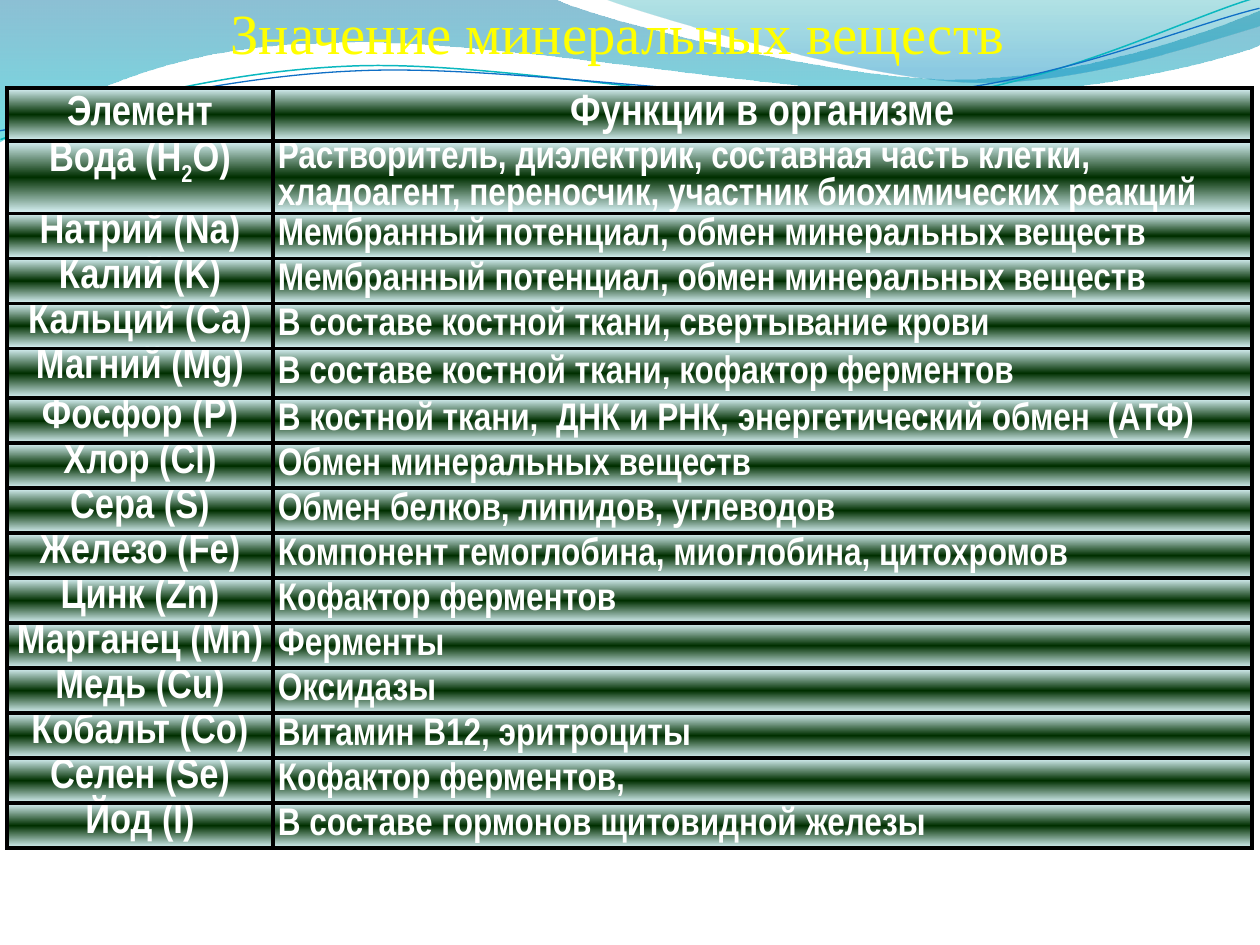
import math

from lxml import etree
from pptx import Presentation
from pptx import util as u
from pptx.dml.color import RGBColor
from pptx.enum import text
from pptx.oxml.ns import qn

HUES = {"title": "FFFF00", "text": "FFFFFF", "edge": "000000",
        "pale": "DBF5F9", "dark": "002F00", "blue": "0F6FC6", "teal": "0AB8BF",
        "deep": "0074A1", "aqua": "00C6CF", "sea": "00A1A9", "sky": "008BBF"}

TITLE = "Значение минеральных веществ"
HEAD = ("Элемент", "Функции в организме")
ROWS = [
    ("Вода (Н_2_О)", "Растворитель, диэлектрик, составная часть клетки, "
     "хладоагент, переносчик, участник биохимических реакций"),
    ("Натрий (Na)", "Мембранный потенциал, обмен минеральных веществ"),
    ("Калий (K)", "Мембранный потенциал, обмен минеральных веществ"),
    ("Кальций (Ca)", "В составе костной ткани, свертывание крови"),
    ("Магний (Mg)", "В составе костной ткани, кофактор ферментов"),
    ("Фосфор (P)", "В костной ткани,  ДНК и РНК, энергетический обмен  (АТФ)"),
    ("Хлор (Cl)", "Обмен минеральных веществ"),
    ("Сера (S)", "Обмен белков, липидов, углеводов"),
    ("Железо (Fe)", "Компонент гемоглобина, миоглобина, цитохромов"),
    ("Цинк (Zn)", "Кофактор ферментов"),
    ("Марганец (Mn)", "Ферменты"),
    ("Медь (Cu)", "Оксидазы"),
    ("Кобальт (Co)", "Витамин В12, эритроциты"),
    ("Селен (Se)", "Кофактор ферментов,"),
    ("Йод (I)", "В составе гормонов щитовидной железы"),
]
COLS = (266, 979)
TALL = {0: 53, 5: 50}
ROW = 45

# Each step holds one point for a straight line or three for a Bezier curve.
BANDS = [
    ([("deep", 0, 45), ("aqua", 100, 55)],
     [[(0, 0)], [(554, -1)],
      [(600, 21), (837, 79), (955, 79)], [(1075, 79), (1207, 33), (1260, 11)],
      [(1261, 45)],
      [(1239, 55), (1096, 96), (940, 95)], [(784, 95), (481, 35), (324, 43)],
      [(163, 45), (58, 105), (-1, 142)]]),
    ([("sea", 0, 30), ("sky", 80, 45)],
     [[(604, -1)],
      [(641, 14), (859, 78), (969, 82)], [(1079, 86), (1211, 40), (1260, 26)],
      [(1260, 0)]]),
]
CURVES = [
    ("teal", 0.85,
     [[(0, 140)], [(60, 117), (199, 72), (349, 66)],
      [(498, 59), (747, 112), (898, 101)], [(1050, 89), (1182, 19), (1257, -3)]]),
    ("blue", 0.75,
     [[(0, 131)], [(59, 121), (207, 77), (357, 71)],
      [(508, 64), (752, 106), (903, 95)], [(1053, 84), (1186, 26), (1260, 8)]]),
]
TILT = 2.7
PIVOT = (629, 73)
METAL = [("pale", 0, 100), ("dark", 50, 100), ("pale", 100, 100)]
SCALE = 914400 / 126


def px(n):
    return u.Emu(round(n * SCALE))


def rgb(name):
    return RGBColor.from_string(HUES[name])


def turn(point):
    """Turn a point clockwise by TILT about PIVOT."""
    a = math.radians(TILT)
    x, y = (p - c for p, c in zip(point, PIVOT))
    return (PIVOT[0] + x * math.cos(a) - y * math.sin(a),
            PIVOT[1] + x * math.sin(a) + y * math.cos(a))


def draw(slide, steps, close):
    """Build an outline and join each three points into one curve."""
    pts = [p for step in steps for p in step]
    pen = slide.shapes.build_freeform(*pts[0], scale=SCALE)
    pen.add_line_segments(pts[1:], close=close)
    shape = pen.convert_to_shape()
    shape.shadow.inherit = False
    lines = iter(list(shape._element.iter(qn("a:lnTo"))))
    for step in steps[1:]:
        group = [next(lines) for _ in step]
        if len(group) == 3:
            curve = etree.Element(qn("a:cubicBezTo"))
            group[0].addprevious(curve)
            for line in group:
                curve.append(line[0])
                line.getparent().remove(line)
    return shape


def shade(fill, node, stops):
    """Fill from top to bottom; stops are (hue, place, opacity)."""
    fill.gradient()
    fill.gradient_angle = 270
    box = next(node.iter(qn("a:gsLst")))
    for old in list(box):
        box.remove(old)
    for hue, place, solid in stops:
        stop = etree.SubElement(box, qn("a:gs"), pos=str(place * 1000))
        tone = etree.SubElement(stop, qn("a:srgbClr"), val=HUES[hue])
        if solid < 100:
            etree.SubElement(tone, qn("a:alpha"), val=str(solid * 1000))


def edge(cell):
    props = cell._tc.get_or_add_tcPr()
    for i, side in enumerate("LRTB"):
        line = etree.Element(qn(f"a:ln{side}"), w=str(u.Pt(2.25)))
        paint = etree.SubElement(line, qn("a:solidFill"))
        etree.SubElement(paint, qn("a:srgbClr"), val=HUES["edge"])
        props.insert(i, line)


def put(item, **values):
    for key, value in values.items():
        setattr(item, key, value)


def style(font, hue, **values):
    font.color.rgb = rgb(hue)
    put(font, **values)


def write(cell, words, size, align, anchor):
    """Fill one cell; text between underscores becomes a subscript."""
    put(cell, margin_left=px(5), margin_right=px(5), margin_top=0,
        margin_bottom=0, vertical_anchor=anchor)
    para = cell.text_frame.paragraphs[0]
    para.alignment = align
    for i, part in enumerate(words.split("_")):
        run = para.add_run()
        run.text = part
        style(run.font, "text", name="Arial Narrow", size=u.Pt(size), bold=True)
        if i % 2:
            run.font._element.set("baseline", "-25000")
    shade(cell.fill, cell._tc, METAL)
    edge(cell)


def add_title(slide):
    title = slide.shapes.title
    slide.shapes._spTree.append(title._element)
    put(title, left=px(-12), top=px(-3), width=px(1260), height=px(69))
    frame = title.text_frame
    frame.text = TITLE
    put(frame, margin_left=0, margin_right=0, margin_top=px(6), margin_bottom=0,
        word_wrap=True, auto_size=text.MSO_AUTO_SIZE.NONE,
        vertical_anchor=text.MSO_ANCHOR.BOTTOM)
    para = frame.paragraphs[0]
    para.alignment = text.PP_ALIGN.CENTER
    style(para.runs[0].font, "title", name="Times New Roman", size=u.Pt(32.4))


def add_grid(slide):
    rows = [HEAD, *ROWS]
    highs = [TALL.get(i, ROW) for i in range(len(rows))]
    frame = slide.shapes.add_table(len(rows), len(COLS), px(7), px(88),
                                   px(sum(COLS)), px(sum(highs)))
    grid = frame.table
    grid.first_row = grid.horz_banding = False
    for col, wide in zip(grid.columns, COLS):
        col.width = px(wide)
    mid, top = text.MSO_ANCHOR.MIDDLE, text.MSO_ANCHOR.TOP
    center, left = text.PP_ALIGN.CENTER, text.PP_ALIGN.LEFT
    for i, (name, role) in enumerate(rows):
        grid.rows[i].height = px(highs[i])
        write(grid.cell(i, 0), name, 24, center, top if i else mid)
        write(grid.cell(i, 1), role, 22 if i else 25, left if i else center, mid)
    frame.height = px(852)


def main():
    deck = Presentation()
    deck.slide_width, deck.slide_height = px(1260), px(945)
    slide = deck.slides.add_slide(deck.slide_layouts[5])
    for stops, steps in BANDS:
        band = draw(slide, steps, True)
        shade(band.fill, band._element, stops)
        band.line.fill.background()
    for hue, width, steps in CURVES:
        curve = draw(slide, [[turn(p) for p in step] for step in steps], False)
        curve.rotation = 360 - TILT
        curve.fill.background()
        curve.line.color.rgb = rgb(hue)
        curve.line.width = u.Pt(width)
    add_title(slide)
    add_grid(slide)
    deck.save("out.pptx")


if __name__ == "__main__":
    main()
